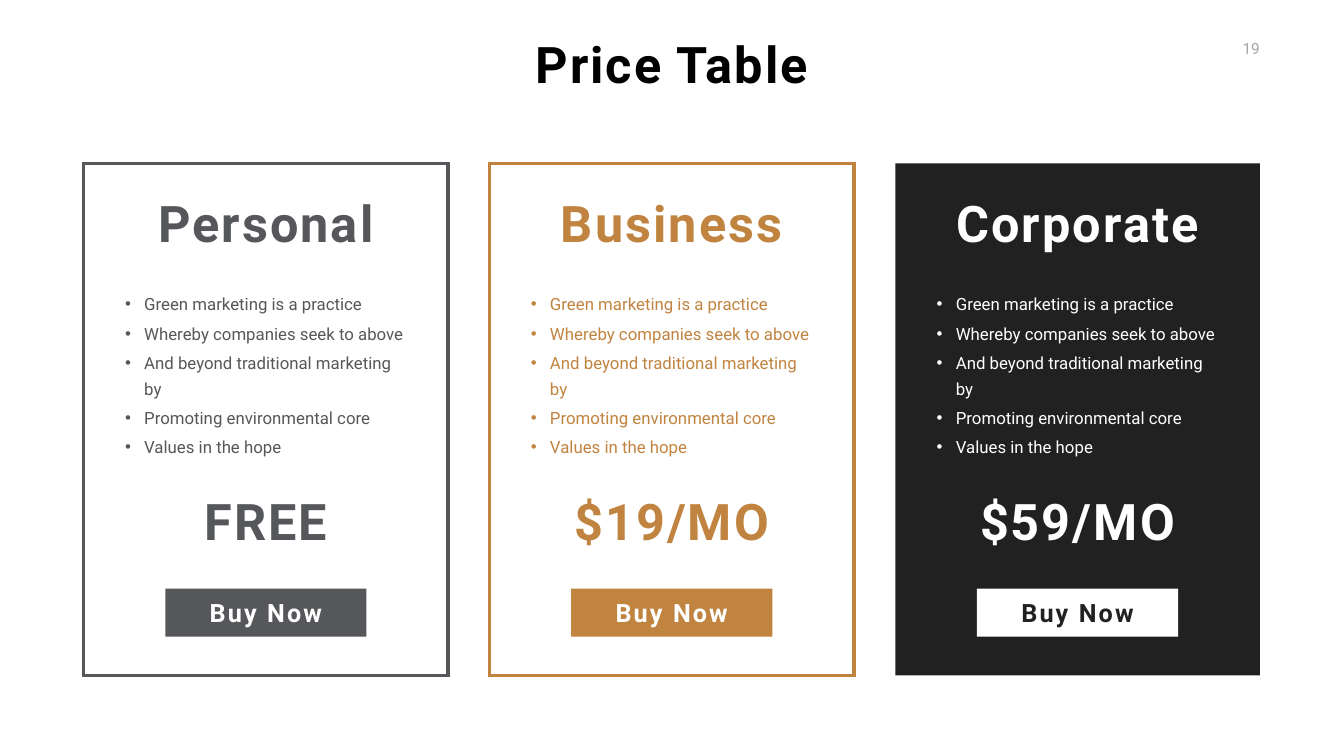
from dataclasses import dataclass

from lxml.etree import SubElement
from pptx import Presentation
from pptx.dml.color import RGBColor
from pptx.enum.shapes import MSO_SHAPE
from pptx.enum.text import MSO_ANCHOR, MSO_AUTO_SIZE, PP_ALIGN
from pptx.oxml.ns import qn
from pptx.util import Inches, Pt

FONT = "Roboto"
BLACK = RGBColor(0x00, 0x00, 0x00)
WHITE = RGBColor(0xFF, 0xFF, 0xFF)
GRAY = RGBColor(0x56, 0x57, 0x5A)
LIGHT_GRAY = RGBColor(0xA6, 0xA6, 0xA6)
BRONZE = RGBColor(0xC1, 0x84, 0x40)
CHARCOAL = RGBColor(0x21, 0x21, 0x21)

CARD_LEFT, CARD_TOP = 1.66, 3.24
CARD_WIDTH, CARD_HEIGHT = 7.23, 10.16
CARD_PITCH = 8.05

FEATURES = [
    "Green marketing is a practice",
    "Whereby companies seek to above",
    "And beyond traditional marketing by",
    "Promoting environmental core",
    "Values in the hope",
]


@dataclass
class Plan:
    name: str
    price: str
    accent: RGBColor
    background: RGBColor
    border: RGBColor | None


PLANS = [
    Plan("Personal", "FREE", GRAY, WHITE, GRAY),
    Plan("Business", "$19/MO", BRONZE, WHITE, BRONZE),
    Plan("Corporate", "$59/MO", WHITE, CHARCOAL, None),
]


def place(shape, left, top, width, height):
    shape.left, shape.top = Inches(left), Inches(top)
    shape.width, shape.height = Inches(width), Inches(height)


def add_bullet(paragraph):
    properties = paragraph._p.get_or_add_pPr()
    properties.set("marL", str(Inches(0.38)))
    properties.set("indent", str(Inches(-0.38)))
    SubElement(properties, qn("a:buFont")).set("typeface", "Arial")
    SubElement(properties, qn("a:buChar")).set("char", "•")


def write_text(shape, lines, size, color, bold=False, align=PP_ALIGN.CENTER,
               anchor=MSO_ANCHOR.MIDDLE, wrap=False, spacing=0, margin=None,
               line_spacing=None, space_before=0, bullets=False):
    frame = shape.text_frame
    frame.word_wrap = wrap
    frame.auto_size = MSO_AUTO_SIZE.SHAPE_TO_FIT_TEXT
    frame.vertical_anchor = anchor
    if margin is not None:
        frame.margin_left = frame.margin_right = Inches(margin)
        frame.margin_top = frame.margin_bottom = Inches(margin)
    for index, line in enumerate(lines):
        paragraph = frame.paragraphs[0] if index == 0 else frame.add_paragraph()
        paragraph.alignment = align
        paragraph.line_spacing = line_spacing or 1.0
        paragraph.space_before = Pt(space_before)
        if bullets:
            add_bullet(paragraph)
        run = paragraph.add_run()
        run.text = line
        run.font.name = FONT
        run.font.size = Pt(size)
        run.font.bold = bold
        run.font.color.rgb = color
        run._r.get_or_add_rPr().set("spc", str(spacing * 100))


def add_label(slide, text, left, top, width, height, **text_format):
    label = slide.shapes.add_textbox(
        Inches(left), Inches(top), Inches(width), Inches(height))
    write_text(label, [text], **text_format)


def add_rectangle(slide, left, top, width, height, fill, border=None):
    rectangle = slide.shapes.add_shape(
        MSO_SHAPE.RECTANGLE,
        Inches(left), Inches(top), Inches(width), Inches(height))
    rectangle.shadow.inherit = False
    rectangle.fill.solid()
    rectangle.fill.fore_color.rgb = fill
    if border is None:
        rectangle.line.fill.background()
    else:
        rectangle.line.color.rgb = border
        rectangle.line.width = Pt(5)
        outline = rectangle._element.spPr.find(qn("a:ln"))
        SubElement(outline, qn("a:miter")).set("lim", "800000")


def add_header(slide, left, top, width, height):
    title = slide.shapes.title
    place(title, left, top, width, height)
    write_text(title, ["Price Table"], size=72, color=BLACK, bold=True,
               anchor=MSO_ANCHOR.TOP, spacing=3)
    add_label(slide, "19", 24.62, 0.78, 0.37, 0.37, size=22, color=LIGHT_GRAY,
              align=PP_ALIGN.RIGHT, anchor=MSO_ANCHOR.TOP, margin=0)


def add_plan_card(slide, plan, feature_list, left, top, width, height):
    def centered(item_width):
        return left + (width - item_width) / 2

    add_rectangle(slide, left, top, width, height, plan.background, plan.border)
    for text, offset in ((plan.name, 0.51), (plan.price, 6.43)):
        add_label(slide, text, centered(6), top + offset, 6, 1.31,
                  size=72, color=plan.accent, bold=True, spacing=3)

    place(feature_list, left + 0.72, top + 2.43, 5.8, 3.49)
    write_text(feature_list, FEATURES, size=24, color=plan.accent,
               align=PP_ALIGN.LEFT, anchor=MSO_ANCHOR.TOP, wrap=True,
               line_spacing=Pt(37), space_before=4.8, bullets=True)
    slide.shapes._spTree.append(feature_list._element)

    add_rectangle(slide, centered(3.99), top + 8.44, 3.99, 0.95, plan.accent)
    add_label(slide, "Buy Now", centered(3), top + 8.56, 3, 0.71,
              size=36, color=plan.background, bold=True, spacing=3)


def main():
    presentation = Presentation()
    presentation.slide_width = Inches(26.66)
    presentation.slide_height = Inches(15)
    slide = presentation.slides.add_slide(presentation.slide_layouts[4])

    add_header(slide, 10.45, 0.61, 5.76, 1.31)
    *feature_lists, spare = list(slide.placeholders)[1:]
    spare._element.getparent().remove(spare._element)
    for index, (plan, feature_list) in enumerate(zip(PLANS, feature_lists)):
        add_plan_card(slide, plan, feature_list,
                      CARD_LEFT + index * CARD_PITCH, CARD_TOP,
                      CARD_WIDTH, CARD_HEIGHT)

    presentation.save("out.pptx")


if __name__ == "__main__":
    main()
